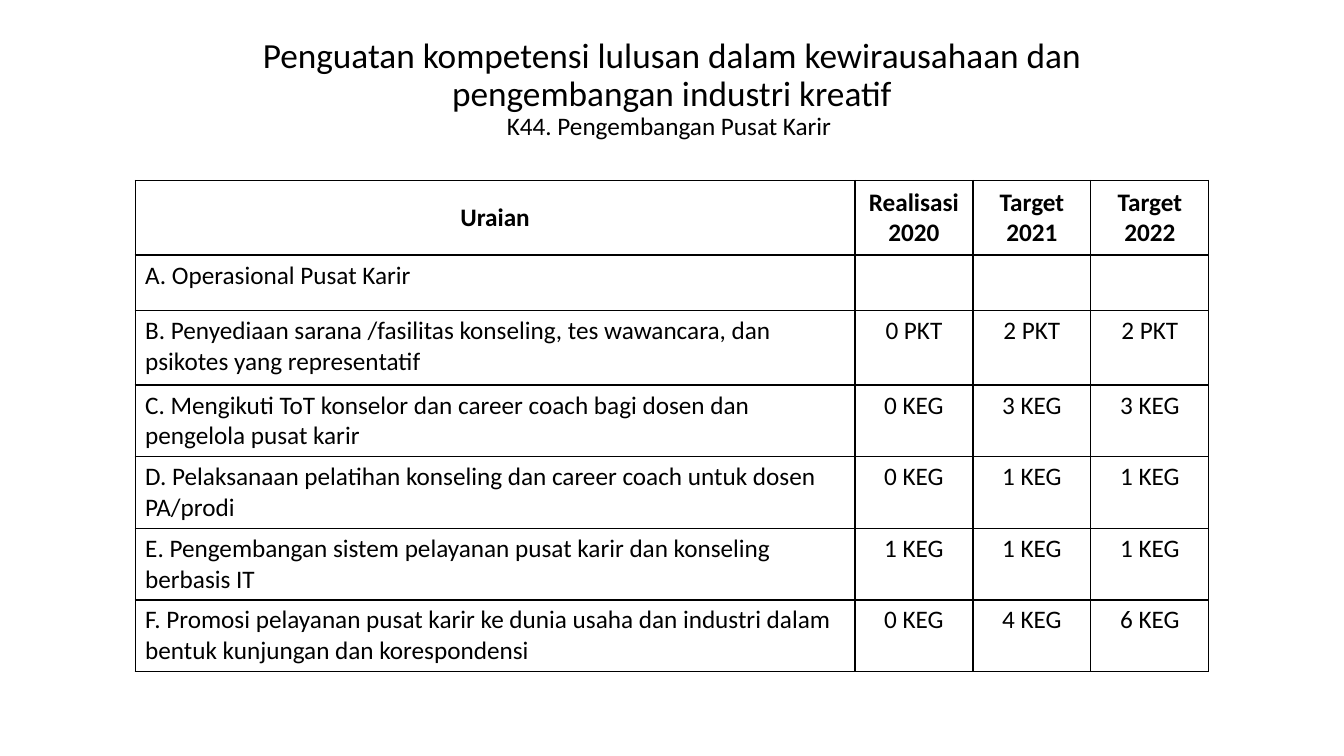
from dataclasses import dataclass

import pptx
import pptx.dml.color
import pptx.enum.text
import pptx.oxml.ns
import pptx.util
from lxml import etree
from pptx.util import Inches

BLACK = pptx.dml.color.RGBColor(0, 0, 0)
WHITE = pptx.dml.color.RGBColor(255, 255, 255)
FONT = "Calibri"
CENTER = pptx.enum.text.PP_ALIGN.CENTER
LEFT = pptx.enum.text.PP_ALIGN.LEFT
MIDDLE = pptx.enum.text.MSO_ANCHOR.MIDDLE
TOP = pptx.enum.text.MSO_ANCHOR.TOP
qn = pptx.oxml.ns.qn

COLUMN_WIDTHS = (7.14, 1.17, 1.17, 1.17)


@dataclass(frozen=True)
class TableRow:
    cells: tuple[str, ...]
    height: float = 0.71
    header: bool = False


ROWS = (
    TableRow(("Uraian", "Realisasi\n2020", "Target\n2021", "Target\n2022"), 0.74, True),
    TableRow(("A. Operasional Pusat Karir", "", "", ""), 0.55),
    TableRow(("B. Penyediaan sarana /fasilitas konseling, tes wawancara, dan psikotes "
              "yang representatif", "0 PKT", "2 PKT", "2 PKT"), 0.74),
    TableRow(("C. Mengikuti ToT konselor dan career coach bagi dosen dan pengelola "
              "pusat karir", "0 KEG", "3 KEG", "3 KEG")),
    TableRow(("D. Pelaksanaan pelatihan konseling dan career coach untuk dosen PA/prodi",
              "0 KEG", "1 KEG", "1 KEG")),
    TableRow(("E. Pengembangan sistem pelayanan pusat karir dan konseling berbasis IT",
              "1 KEG", "1 KEG", "1 KEG")),
    TableRow(("F. Promosi pelayanan pusat karir ke dunia usaha dan industri dalam bentuk "
              "kunjungan dan korespondensi", "0 KEG", "4 KEG", "6 KEG")),
)


def add_span(para, text: str, *, size: float = 18, bold: bool = False) -> None:
    span = para.add_run()
    span.text = text
    span.font.name = FONT
    span.font.size = pptx.util.Pt(size)
    span.font.bold = bold
    span.font.color.rgb = BLACK


def add_break(para, size: float) -> None:
    """Add a line break whose height follows the given text size."""
    para.add_line_break()
    line_break = para._p.findall(qn("a:br"))[-1]
    etree.SubElement(line_break, qn("a:rPr"), sz=str(round(size * 100)))


def add_borders(cell, width: float = 1) -> None:
    properties = cell._tc.get_or_add_tcPr()
    for side in ("lnL", "lnR", "lnT", "lnB"):
        line = etree.SubElement(properties, qn(f"a:{side}"), w=str(pptx.util.Pt(width)))
        fill = etree.SubElement(line, qn("a:solidFill"))
        etree.SubElement(fill, qn("a:srgbClr"), val=str(BLACK))


def fill_cell(cell, text: str, *, centered: bool, header: bool) -> None:
    add_borders(cell)
    cell.fill.background()
    cell.vertical_anchor = MIDDLE if header else TOP
    for index, line in enumerate(text.split("\n")):
        para = cell.text_frame.add_paragraph() if index else cell.text_frame.paragraphs[0]
        para.alignment = CENTER if centered else LEFT
        if line:
            add_span(para, line, bold=header)


def add_title(page) -> None:
    box = page.shapes.title
    box.left, box.top = Inches(1.38), Inches(0.35)
    box.width, box.height = Inches(10.57), Inches(1.08)
    frame = box.text_frame
    frame.word_wrap = True
    frame.auto_size = pptx.enum.text.MSO_AUTO_SIZE.NONE
    frame.vertical_anchor = MIDDLE
    para = frame.paragraphs[0]
    para.alignment = CENTER
    para.line_spacing = 0.9
    add_span(para, "Penguatan kompetensi lulusan dalam kewirausahaan dan "
                   "pengembangan industri kreatif", size=25.2)
    add_break(para, 25.2)
    add_span(para, "K44. Pengembangan Pusat Karir ")


def add_target_table(page) -> None:
    table = page.shapes.add_table(
        len(ROWS), len(COLUMN_WIDTHS), Inches(1.34), Inches(1.79),
        Inches(sum(COLUMN_WIDTHS)), Inches(sum(row.height for row in ROWS))).table
    table.horz_banding = False
    for column, width in zip(table.columns, COLUMN_WIDTHS):
        column.width = Inches(width)
    for row_index, row in enumerate(ROWS):
        table.rows[row_index].height = Inches(row.height)
        for column_index, text in enumerate(row.cells):
            fill_cell(table.cell(row_index, column_index), text,
                      centered=row.header or column_index > 0, header=row.header)


def main() -> None:
    deck = pptx.Presentation()
    deck.slide_width, deck.slide_height = Inches(13.33), Inches(7.5)
    page = deck.slides.add_slide(deck.slide_layouts[5])
    page.background.fill.solid()
    page.background.fill.fore_color.rgb = WHITE
    add_title(page)
    add_target_table(page)
    deck.save("out.pptx")


if __name__ == "__main__":
    main()
